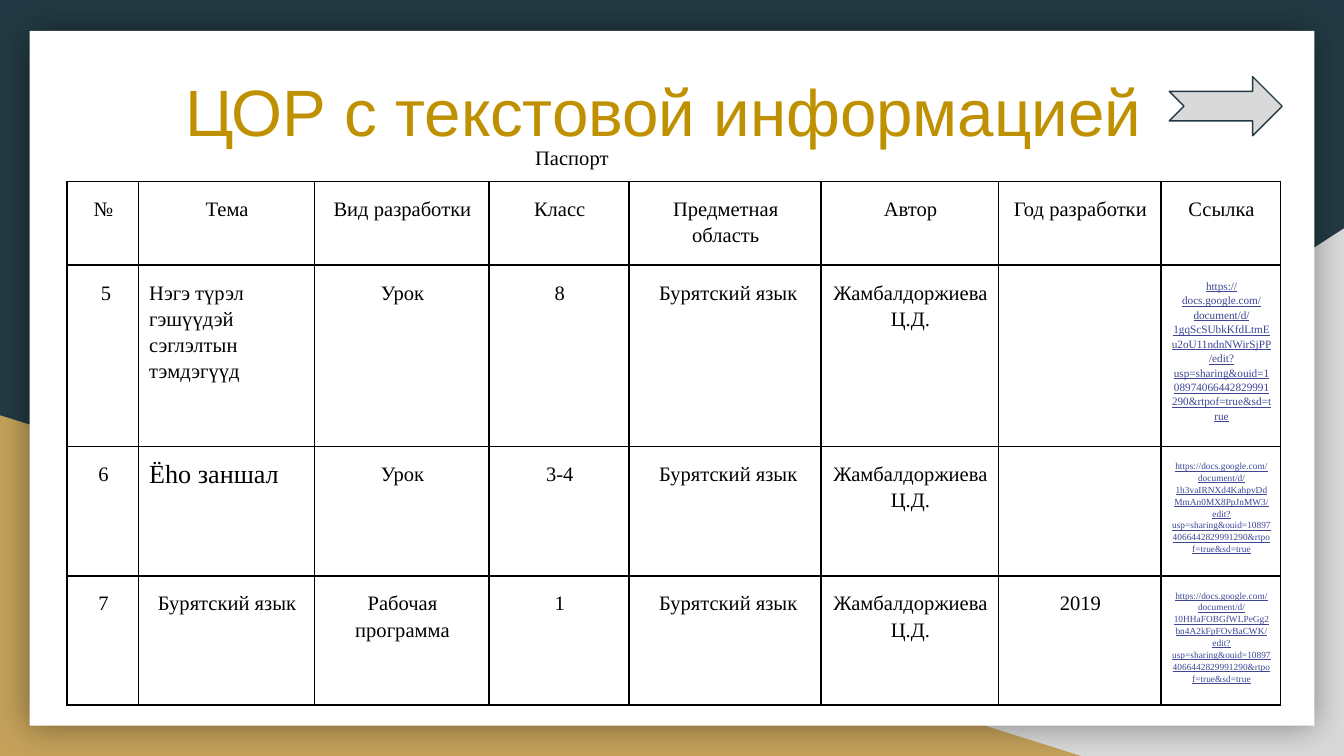
from dataclasses import dataclass
from typing import Any

import pptx
import pptx.dml.color
import pptx.enum.shapes
import pptx.enum.text
import pptx.oxml
import pptx.oxml.ns
import pptx.util

Inches = pptx.util.Inches
Pt = pptx.util.Pt
SHAPE = pptx.enum.shapes.MSO_SHAPE
ALIGN = pptx.enum.text.PP_ALIGN
ANCHOR = pptx.enum.text.MSO_ANCHOR

COLORS = {
    "night": "233A44",
    "silver": "D9D9D9",
    "sand": "C4A15A",
    "paper": "FFFFFF",
    "gold": "BF9000",
    "ink": "000000",
    "link": "3D4594",
}
NS = pptx.oxml.ns.nsdecls("a")
MARGINS = ("margin_left", "margin_top", "margin_right", "margin_bottom")
COLUMN_WIDTHS = (0.53, 1.31, 1.3, 1.04, 1.43, 1.32, 1.21, 0.89)
ROW_HEIGHTS = (0.39, 0.55, 0.57, 0.95)
HEADINGS = ("№", "Тема", "Вид разработки", "Класс", "Предметная область",
            "Автор", "Год разработки", "Ссылка")
SUBJECT = " Бурятский язык"
AUTHOR = "Жамбалдоржиева Ц.Д."
LINK = ("https://docs.google.com/document/d/{}/edit"
        "?usp=sharing&ouid=108974066442829991290&rtpof=true&sd=true")


@dataclass(frozen=True)
class Box:
    left: float
    top: float
    width: float
    height: float

    def lengths(self) -> tuple:
        return tuple(Inches(v) for v in (self.left, self.top, self.width, self.height))


@dataclass(frozen=True)
class Panel:
    kind: Any
    box: Box
    color: str
    outline: str = ""
    flipped: bool = False
    shadowed: bool = False


@dataclass(frozen=True)
class TextStyle:
    size: float = 11
    font: str = "Times New Roman"
    color: str = "ink"
    underline: bool = False
    align: Any = ALIGN.CENTER
    spacing: float = 1.15


@dataclass(frozen=True)
class Resource:
    number: str
    topic: str
    topic_style: TextStyle
    form: str
    grade: str
    year: str
    document: str
    link_size: float

    def entries(self) -> list:
        plain = TextStyle()
        link_style = TextStyle(size=self.link_size, color="link", underline=True)
        return [(self.number, plain), (self.topic, self.topic_style), (self.form, plain),
                (self.grade, plain), (SUBJECT, plain), (AUTHOR, plain),
                (self.year, plain), (LINK.format(self.document), link_style)]


BACKDROP = (
    Panel(SHAPE.RIGHT_TRIANGLE, Box(3.92, 1.7, 6.08, 3.93), "silver", flipped=True),
    Panel(SHAPE.RIGHT_TRIANGLE, Box(0, 3.09, 8.06, 2.54), "sand"),
    Panel(SHAPE.RECTANGLE, Box(0.22, 0.23, 9.56, 5.17), "paper", shadowed=True),
)
NEXT_ARROW = Panel(SHAPE.NOTCHED_RIGHT_ARROW, Box(8.7, 0.57, 0.84, 0.44), "silver", "night")
RESOURCES = (
    Resource(" 5", "Нэгэ түрэл гэшүүдэй сэглэлтын тэмдэгүүд", TextStyle(align=ALIGN.LEFT),
             "Урок", "8", "", "1gqScSUbkKfdLtmEu2oU11ndnNWirSjPP", 6),
    Resource("6", "Ёhо заншал", TextStyle(size=14, align=ALIGN.LEFT, spacing=1.0),
             "Урок", "3-4", "", "1h3vaIRNXd4KahpvDdMmAn0MX8PpJnMW3", 5),
    Resource("7", "Бурятский язык", TextStyle(),
             "Рабочая программа", "1", "2019", "10HHaFOBGfWLPeGg2bn4A2kFpFOvBaCWK", 5),
)


def rgb(name: str) -> pptx.dml.color.RGBColor:
    return pptx.dml.color.RGBColor.from_string(COLORS[name])


def draw_panel(slide: Any, panel: Panel) -> None:
    shape = slide.shapes.add_shape(panel.kind, *panel.box.lengths())
    shape.shadow.inherit = False
    shape.fill.solid()
    shape.fill.fore_color.rgb = rgb(panel.color)
    if panel.outline:
        shape.line.color.rgb = rgb(panel.outline)
        shape.line.width = Pt(0.75)
    else:
        shape.line.fill.background()
    properties = shape._element.spPr
    if panel.flipped:
        properties.xfrm.set("flipH", "1")
    if panel.shadowed:
        effects = properties.find(pptx.oxml.ns.qn("a:effectLst"))
        effects.append(pptx.oxml.parse_xml(
            f'<a:outerShdw {NS} blurRad="{Pt(18)}" dist="0" dir="0" algn="ctr" rotWithShape="0">'
            f'<a:srgbClr val="{COLORS["ink"]}"><a:alpha val="40000"/></a:srgbClr></a:outerShdw>'))


def write(frame: Any, text: str, style: TextStyle) -> None:
    paragraph = frame.paragraphs[0]
    paragraph.alignment = style.align
    paragraph.line_spacing = style.spacing
    run = paragraph.add_run()
    run.text = text
    run.font.color.rgb = rgb(style.color)
    formats = {"size": Pt(style.size), "name": style.font, "underline": style.underline}
    for attribute, value in formats.items():
        setattr(run.font, attribute, value)


def draw_label(slide: Any, box: Box, text: str, style: TextStyle, anchor: Any) -> None:
    frame = slide.shapes.add_textbox(*box.lengths()).text_frame
    formats = {"word_wrap": True, "vertical_anchor": anchor,
               **dict.fromkeys(MARGINS, Inches(0.1))}
    for attribute, value in formats.items():
        setattr(frame, attribute, value)
    write(frame, text, style)


def fill_cell(cell: Any, text: str, style: TextStyle) -> None:
    cell.fill.background()
    for attribute, margin in zip(MARGINS, (0.08, 0.1, 0.07, 0.1)):
        setattr(cell, attribute, Inches(margin))
    if text:
        write(cell.text_frame, text, style)
    properties = cell._tc.get_or_add_tcPr()
    for position, side in enumerate(("lnL", "lnR", "lnT", "lnB")):
        properties.insert(position, pptx.oxml.parse_xml(
            f'<a:{side} {NS} w="{Pt(1)}"><a:solidFill>'
            f'<a:srgbClr val="{COLORS["ink"]}"/></a:solidFill></a:{side}>'))


def draw_passport(slide: Any) -> None:
    rows = [[(heading, TextStyle()) for heading in HEADINGS]]
    rows += [resource.entries() for resource in RESOURCES]
    box = Box(0.5, 1.35, sum(COLUMN_WIDTHS), 3.56)
    holder = slide.shapes.add_table(len(rows), len(HEADINGS), *box.lengths())
    passport = holder.table
    passport.first_row = passport.horz_banding = False
    for column, width in zip(passport.columns, COLUMN_WIDTHS):
        column.width = Inches(width)
    for row, height, entries in zip(passport.rows, ROW_HEIGHTS, rows):
        row.height = Inches(height)
        for cell, (text, style) in zip(row.cells, entries):
            fill_cell(cell, text, style)
    holder.height = Inches(box.height)


def main() -> None:
    """Build the slide listing text-based digital learning resources."""
    deck = pptx.Presentation()
    deck.slide_width, deck.slide_height = Inches(10), Inches(5.625)
    slide = deck.slides.add_slide(deck.slide_layouts[6])
    slide.background.fill.solid()
    slide.background.fill.fore_color.rgb = rgb("night")
    for panel in BACKDROP:
        draw_panel(slide, panel)
    draw_label(slide, Box(0.83, 0.43, 8.21, 0.73), "ЦОР с текстовой информацией",
               TextStyle(size=35.1, font="Arial", color="gold", spacing=1.0), ANCHOR.TOP)
    draw_passport(slide)
    draw_label(slide, Box(3.35, 0.96, 1.81, 0.39), "Паспорт", TextStyle(), ANCHOR.MIDDLE)
    draw_panel(slide, NEXT_ARROW)
    deck.save("out.pptx")


if __name__ == "__main__":
    main()
